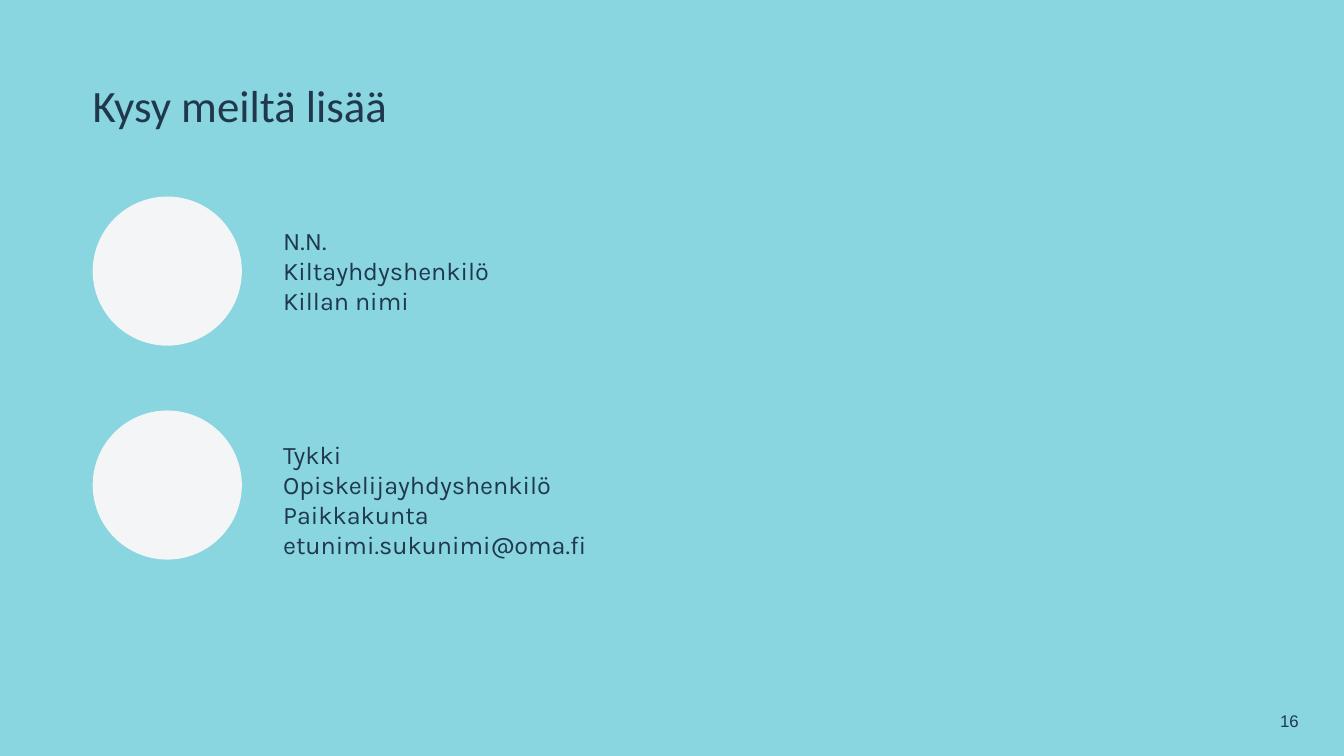
from dataclasses import dataclass

from pptx import Presentation
from pptx.dml.color import RGBColor
from pptx.enum.shapes import MSO_SHAPE
from pptx.enum.text import MSO_ANCHOR, MSO_AUTO_SIZE, PP_ALIGN
from pptx.slide import Slide
from pptx.text.text import TextFrame
from pptx.util import Inches, Pt

COLORS = {"background": "89D5E0", "text": "1F384C", "portrait": "F3F5F6"}
SLIDE_WIDTH, SLIDE_HEIGHT = Inches(13.33), Inches(7.5)

# Positions and sizes are percentages of the slide's width or height.
MARGIN = 6.9
PORTRAIT_WIDTH = 11.1
PORTRAIT_TOP = 26
CONTACT_PITCH = 28.3
DETAILS_LEFT = 20.33
DETAILS_WIDTH = 32.33
DETAILS_DROP = 3.1
DETAILS_PADDING = 1.47
LINE_HEIGHT = 4


@dataclass(frozen=True)
class Contact:
    lines: tuple[str, ...]


CONTACTS = (
    Contact(("N.N.", "Kiltayhdyshenkilö", "Killan nimi")),
    Contact(("Tykki", "Opiskelijayhdyshenkilö", "Paikkakunta",
             "etunimi.sukunimi@oma.fi")),
)


def across(percent: float) -> int:
    return round(SLIDE_WIDTH * percent / 100)


def down(percent: float) -> int:
    return round(SLIDE_HEIGHT * percent / 100)


def color(name: str) -> RGBColor:
    return RGBColor.from_string(COLORS[name])


def write(frame: TextFrame, lines: tuple[str, ...], font: str, size: float,
          alignment: PP_ALIGN = PP_ALIGN.LEFT) -> None:
    frame.word_wrap = True
    frame.text = "\n".join(lines)
    for paragraph in frame.paragraphs:
        paragraph.alignment = alignment
        paragraph.font.name = font
        paragraph.font.size = Pt(size)
        paragraph.font.color.rgb = color("text")


def remove_margins(frame: TextFrame) -> None:
    frame.margin_left = frame.margin_right = 0
    frame.margin_top = frame.margin_bottom = 0


def add_title(slide: Slide, text: str) -> None:
    title = slide.shapes.title
    title.left, title.top = across(MARGIN), down(10.8)
    title.width, title.height = across(86.27), down(15.2)
    frame = title.text_frame
    remove_margins(frame)
    frame.auto_size = MSO_AUTO_SIZE.NONE
    frame.vertical_anchor = MSO_ANCHOR.TOP
    write(frame, (text,), "Calibri", 32)
    frame.paragraphs[0].line_spacing = 0.95


def add_page_number(slide: Slide, number: int) -> None:
    box = slide.shapes.add_textbox(across(93.1), down(94), across(3.53), down(2.67))
    remove_margins(box.text_frame)
    box.text_frame.vertical_anchor = MSO_ANCHOR.MIDDLE
    write(box.text_frame, (str(number),), "Arial", 12, PP_ALIGN.RIGHT)


def add_contact(slide: Slide, contact: Contact, top: float) -> None:
    diameter = across(PORTRAIT_WIDTH)
    portrait = slide.shapes.add_shape(
        MSO_SHAPE.OVAL, across(MARGIN), down(top), diameter, diameter)
    portrait.shadow.inherit = False
    portrait.fill.solid()
    portrait.fill.fore_color.rgb = color("portrait")
    portrait.line.fill.background()

    height = len(contact.lines) * LINE_HEIGHT + DETAILS_PADDING
    details = slide.shapes.add_textbox(
        across(DETAILS_LEFT), down(top + DETAILS_DROP),
        across(DETAILS_WIDTH), down(height))
    write(details.text_frame, contact.lines, "Karla", 18)


def main() -> None:
    presentation = Presentation()
    presentation.slide_width, presentation.slide_height = SLIDE_WIDTH, SLIDE_HEIGHT
    slide = presentation.slides.add_slide(
        presentation.slide_layouts.get_by_name("Title Only"))
    slide.background.fill.solid()
    slide.background.fill.fore_color.rgb = color("background")

    add_title(slide, "Kysy meiltä lisää")
    for row, contact in enumerate(CONTACTS):
        add_contact(slide, contact, PORTRAIT_TOP + row * CONTACT_PITCH)
    add_page_number(slide, 16)
    presentation.save("out.pptx")


if __name__ == "__main__":
    main()
